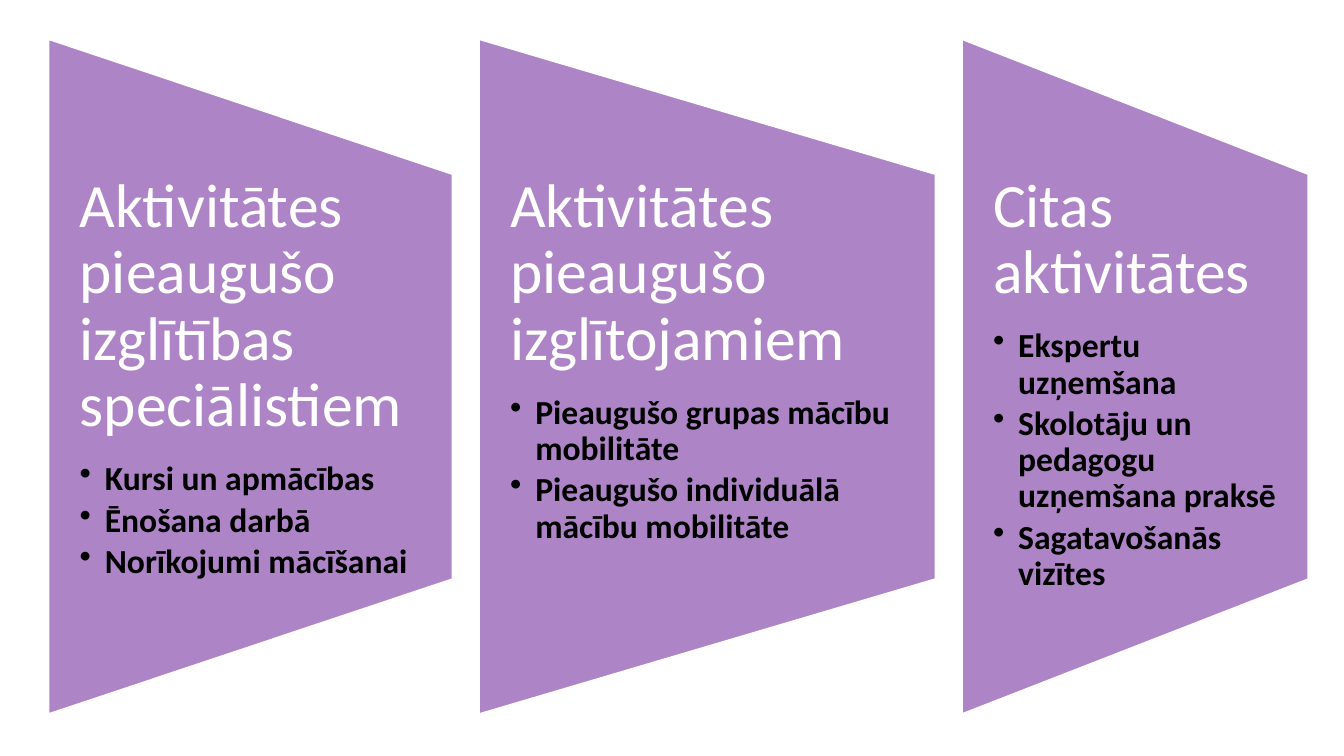
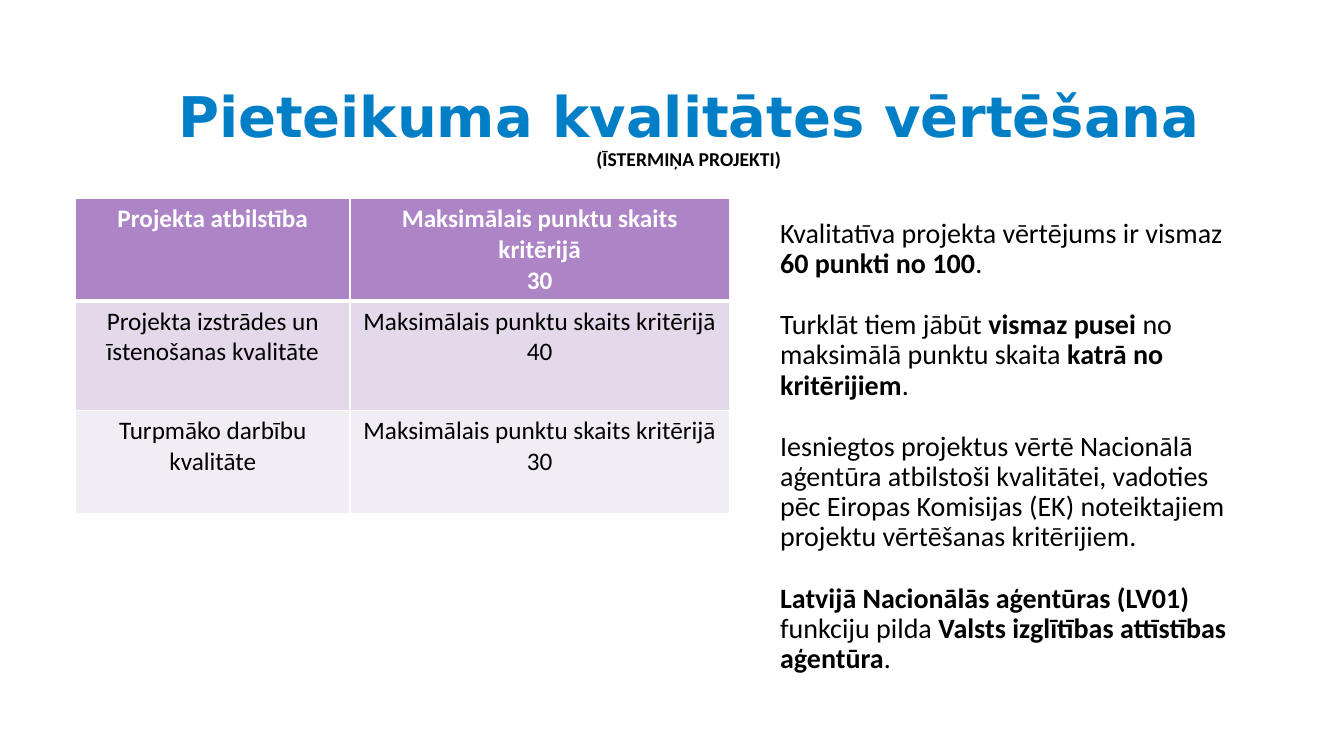
import pptx
import pptx.util
import pptx.dml.color
import pptx.enum.shapes
import pptx.enum.text
import pptx.oxml
import pptx.oxml.ns
import lxml.etree

Pt = pptx.util.Pt
ALIGN = pptx.enum.text.PP_ALIGN
ANCHOR = pptx.enum.text.MSO_ANCHOR

BODY_FONT, TITLE_FONT = "Calibri", "DejaVu Sans"
PURPLE, BLUE, WHITE, BLACK = "AD84C6", "007FC7", "FFFFFF", "000000"
ROW_FILLS = [PURPLE, "E3D9EA", "F1EDF5"]

PANELS = [
    (288.8, "Aktivitātes pieaugušo izglītības speciālistiem",
     ["Kursi un apmācības", "Ēnošana darbā", "Norīkojumi mācīšanai"]),
    (326.2, "Aktivitātes pieaugušo izglītojamiem",
     ["Pieaugušo grupas mācību mobilitāte",
      "Pieaugušo individuālā mācību mobilitāte"]),
    (247.6, "Citas aktivitātes",
     ["Ekspertu uzņemšana", "Skolotāju un pedagogu uzņemšana praksē",
      "Sagatavošanās vizītes"]),
]
PANEL_LEFT, PANEL_GAP, PANEL_MIDDLE = 34.6, 18.7, 269
PANEL_HEIGHT, PANEL_TEXT_HEIGHT = 482.4, 289.2

TITLE = "Pieteikuma kvalitātes vērtēšana"
SUBTITLE = "(ĪSTERMIŅA PROJEKTI)"
POINTS = "Maksimālais punktu skaits kritērijā"
CRITERIA = [
    ("Projekta atbilstība", "30"),
    ("Projekta izstrādes un īstenošanas kvalitāte", "40"),
    ("Turpmāko darbību kvalitāte", "30"),
]
COLUMN_WIDTHS = [196, 271]
ROW_HEIGHTS = [73, 78, 74]
RULES = [
    [("Kvalitatīva projekta vērtējums ir vismaz ", False),
     ("60 punkti no 100", True), (".", False)],
    [("Turklāt tiem jābūt ", False), ("vismaz pusei ", True),
     ("no maksimālā punktu skaita ", False),
     ("katrā no kritērijiem", True), (".", False)],
    [("Iesniegtos projektus vērtē Nacionālā aģentūra atbilstoši kvalitātei, "
      "vadoties pēc Eiropas Komisijas (EK) noteiktajiem projektu vērtēšanas "
      "kritērijiem.", False)],
    [("Latvijā Nacionālās aģentūras (LV01)", True),
     (" funkciju pilda ", False),
     ("Valsts izglītības attīstības aģentūra", True), (".", False)],
]


def rgb(color):
    return pptx.dml.color.RGBColor.from_string(color)


def add_run(p, text, size, color=BLACK, bold=False, font=BODY_FONT):
    r = p.add_run()
    r.text = text
    r.font.size, r.font.bold, r.font.name = Pt(size), bold, font
    r.font.color.rgb = rgb(color)


def add_paragraph(tf, first, after=0):
    p = tf.paragraphs[0] if first else tf.add_paragraph()
    p.line_spacing = 0.9
    p.space_before, p.space_after = Pt(0), Pt(after)
    return p


def set_bullet(p, char=None, indent=0):
    pPr = p._p.get_or_add_pPr()
    pPr.set("marL", str(Pt(indent)))
    pPr.set("indent", str(-Pt(indent)))
    tag = "a:buChar" if char else "a:buNone"
    bu = lxml.etree.SubElement(pPr, pptx.oxml.ns.qn(tag))
    if char:
        bu.set("char", char)


def place(sp, left, top, width, height):
    sp.left, sp.top, sp.width, sp.height = map(Pt, (left, top, width, height))
    tf = sp.text_frame
    tf.word_wrap = True
    tf.auto_size = pptx.enum.text.MSO_AUTO_SIZE.NONE
    return tf


def set_borders(cell, bottom, top):
    tcPr = cell._tc.get_or_add_tcPr()
    sides = [("L", 1), ("R", 1), ("T", top), ("B", bottom)]
    for i, (side, width) in enumerate(sides):
        tcPr.insert(i, pptx.oxml.parse_xml(
            f'<a:ln{side} {pptx.oxml.ns.nsdecls("a")} w="{Pt(width)}">'
            f'<a:solidFill><a:srgbClr val="{WHITE}"/></a:solidFill></a:ln{side}>'))


def add_panel(s, left, width, heading, items):
    sp = s.shapes.add_shape(
        pptx.enum.shapes.MSO_SHAPE.FLOWCHART_MANUAL_OPERATION,
        Pt(left + (width - PANEL_HEIGHT) / 2), Pt(PANEL_MIDDLE - width / 2),
        Pt(PANEL_HEIGHT), Pt(width))
    sp.rotation = 270
    sp.shadow.inherit = False
    sp.fill.solid()
    sp.fill.fore_color.rgb = rgb(PURPLE)
    sp.line.color.rgb = rgb(WHITE)
    sp.line.width = Pt(1.5)

    box = s.shapes.add_textbox(0, 0, 0, 0)
    tf = place(box, left, PANEL_MIDDLE - PANEL_TEXT_HEIGHT / 2,
               width, PANEL_TEXT_HEIGHT)
    tf.margin_left = tf.margin_right = Pt(22.3)
    tf.margin_top = tf.margin_bottom = 0
    add_run(add_paragraph(tf, True, 15.4), heading, 44, WHITE)
    for item in items:
        p = add_paragraph(tf, False, 3.6)
        p.level = 1
        set_bullet(p, "•", 18)
        add_run(p, item, 24, bold=True)


def build_activities(prs):
    s = prs.slides.add_slide(prs.slide_layouts[6])
    left = PANEL_LEFT
    for width, heading, items in PANELS:
        add_panel(s, left, width, heading, items)
        left += width + PANEL_GAP


def add_criteria_table(s):
    table = s.shapes.add_table(
        len(CRITERIA), len(COLUMN_WIDTHS), Pt(54), Pt(142),
        Pt(sum(COLUMN_WIDTHS)), Pt(sum(ROW_HEIGHTS))).table
    for column, width in zip(table.columns, COLUMN_WIDTHS):
        column.width = Pt(width)
    for i, (criterion, points) in enumerate(CRITERIA):
        table.rows[i].height = Pt(ROW_HEIGHTS[i])
        header = i == 0
        for j, lines in enumerate([[criterion], [POINTS, points]]):
            cell = table.cell(i, j)
            cell.fill.solid()
            cell.fill.fore_color.rgb = rgb(ROW_FILLS[i])
            set_borders(cell, 3 if header else 1, 3 if i == 1 else 1)
            tf = cell.text_frame
            for k, line in enumerate(lines):
                p = tf.add_paragraph() if k else tf.paragraphs[0]
                p.alignment = ALIGN.CENTER
                add_run(p, line, 18, WHITE if header else BLACK, header)


def build_assessment(prs):
    s = prs.slides.add_slide(prs.slide_layouts[1])
    tf = place(s.shapes.title, 78, 41, 828, 104)
    tf.vertical_anchor = ANCHOR.MIDDLE
    p = add_paragraph(tf, True)
    p.alignment = ALIGN.CENTER
    add_run(p, TITLE, 40, BLUE, True, TITLE_FONT)
    p.add_line_break()
    add_run(p, SUBTITLE, 14, bold=True)

    add_criteria_table(s)

    tf = place(s.placeholders[1], 550, 153, 350, 340)
    tf.vertical_anchor = ANCHOR.TOP
    for i, runs in enumerate(RULES):
        p = add_paragraph(tf, i == 0, 22)
        set_bullet(p)
        for text, bold in runs:
            add_run(p, text, 20, bold=bold)


def main():
    prs = pptx.Presentation()
    prs.slide_width, prs.slide_height = Pt(960), Pt(540)
    build_activities(prs)
    build_assessment(prs)
    prs.save("out.pptx")


if __name__ == "__main__":
    main()
